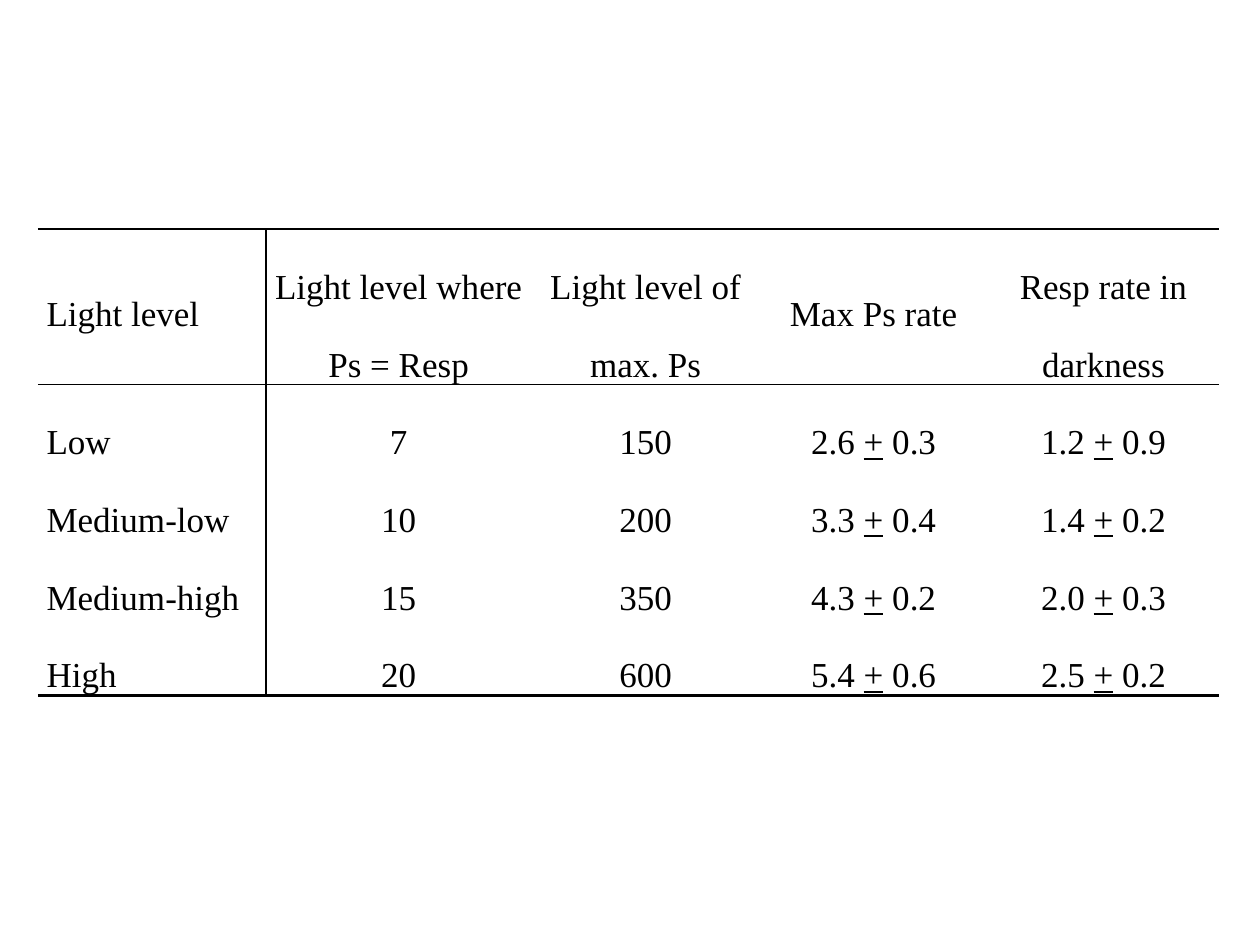
from dataclasses import dataclass

import pptx
import pptx.dml.color
import pptx.enum.text
import pptx.oxml
import pptx.oxml.ns
import pptx.table
import pptx.util

Pt = pptx.util.Pt
PP_ALIGN = pptx.enum.text.PP_ALIGN


@dataclass(frozen=True)
class Theme:
    font: str = "Times New Roman"
    size: float = 20
    ink: str = "000000"
    line_spacing: float = 2.0
    side_margin: float = 5
    outer_rule: float = 1.5
    inner_rule: float = 1


@dataclass(frozen=True)
class Row:
    height: float
    texts: tuple[str, ...]


THEME = Theme()
LEFT, TOP, FRAME_HEIGHT = 21.6, 131, 288
COLUMN_WIDTHS = (130.3, 151.9, 130.3, 130.3, 132.5)
HEADER_HEIGHT, BODY_HEIGHT = 76.3, 38.2
SINGLE_LINE_DROP = 15.5
SINGLE_LINE_HEADERS = ("Light level", "Max Ps rate")

ROWS = (
    Row(HEADER_HEIGHT, ("Light level", "Light level where Ps = Resp",
                        "Light level of max. Ps", "Max Ps rate",
                        "Resp rate in darkness")),
    Row(BODY_HEIGHT, ("Low", "7", "150", "2.6 + 0.3", "1.2 + 0.9")),
    Row(BODY_HEIGHT, ("Medium-low", "10", "200", "3.3 + 0.4", "1.4 + 0.2")),
    Row(BODY_HEIGHT, ("Medium-high", "15", "350", "4.3 + 0.2", "2.0 + 0.3")),
    Row(BODY_HEIGHT, ("High", "20", "600", "5.4 + 0.6", "2.5 + 0.2")),
)


def write_cell(cell: pptx.table._Cell, text: str, align: PP_ALIGN) -> None:
    """Fill in one cell, underlining the plus of a plus-or-minus value."""
    cell.margin_left = cell.margin_right = Pt(THEME.side_margin)
    cell.margin_top = Pt(SINGLE_LINE_DROP if text in SINGLE_LINE_HEADERS else 0)
    cell.margin_bottom = 0
    p = cell.text_frame.paragraphs[0]
    p.alignment = align
    p.line_spacing = THEME.line_spacing
    before, plus, after = text.partition("+")
    for part in filter(None, (before, plus, after)):
        r = p.add_run()
        r.text = part
        r.font.name = THEME.font
        r.font.size = Pt(THEME.size)
        r.font.color.rgb = pptx.dml.color.RGBColor.from_string(THEME.ink)
        if part == "+":
            r.font.underline = True


def rule_cell(cell: pptx.table._Cell, widths: dict[str, float]) -> None:
    """Draw the given sides (L, R, T, B) and clear the others and the fill."""
    cell.fill.background()
    tc_pr = cell._tc.get_or_add_tcPr()
    for i, side in enumerate("LRTB"):
        width = widths.get(side, 0)
        paint = (f'<a:solidFill><a:srgbClr val="{THEME.ink}"/></a:solidFill>'
                 if width else "<a:noFill/>")
        tc_pr.insert(i, pptx.oxml.parse_xml(
            f'<a:ln{side} {pptx.oxml.ns.nsdecls("a")} w="{Pt(width)}">'
            f"{paint}</a:ln{side}>"))


def cell_rules(row: int, column: int) -> dict[str, float]:
    rules = {}
    if row <= 1:
        rules["T"] = THEME.inner_rule if row else THEME.outer_rule
    if row == 0:
        rules["B"] = THEME.inner_rule
    if row == len(ROWS) - 1:
        rules["B"] = THEME.outer_rule
    if column <= 1:
        rules["L" if column else "R"] = THEME.inner_rule
    return rules


def add_light_table(s: pptx.slide.Slide) -> None:
    frame = s.shapes.add_table(len(ROWS), len(COLUMN_WIDTHS), Pt(LEFT), Pt(TOP),
                               Pt(sum(COLUMN_WIDTHS)), Pt(FRAME_HEIGHT))
    table = frame.table
    table.first_row = table.horz_banding = False
    for column, width in zip(table.columns, COLUMN_WIDTHS):
        column.width = Pt(width)
    for i, row in enumerate(ROWS):
        table.rows[i].height = Pt(row.height)
        for j, text in enumerate(row.texts):
            cell = table.cell(i, j)
            write_cell(cell, text, PP_ALIGN.CENTER if j else PP_ALIGN.LEFT)
            rule_cell(cell, cell_rules(i, j))
    frame.height = Pt(FRAME_HEIGHT)


def main() -> None:
    prs = pptx.Presentation()
    prs.slide_width, prs.slide_height = Pt(720), Pt(540)
    add_light_table(prs.slides.add_slide(prs.slide_layouts[6]))
    prs.save("out.pptx")


if __name__ == "__main__":
    main()
